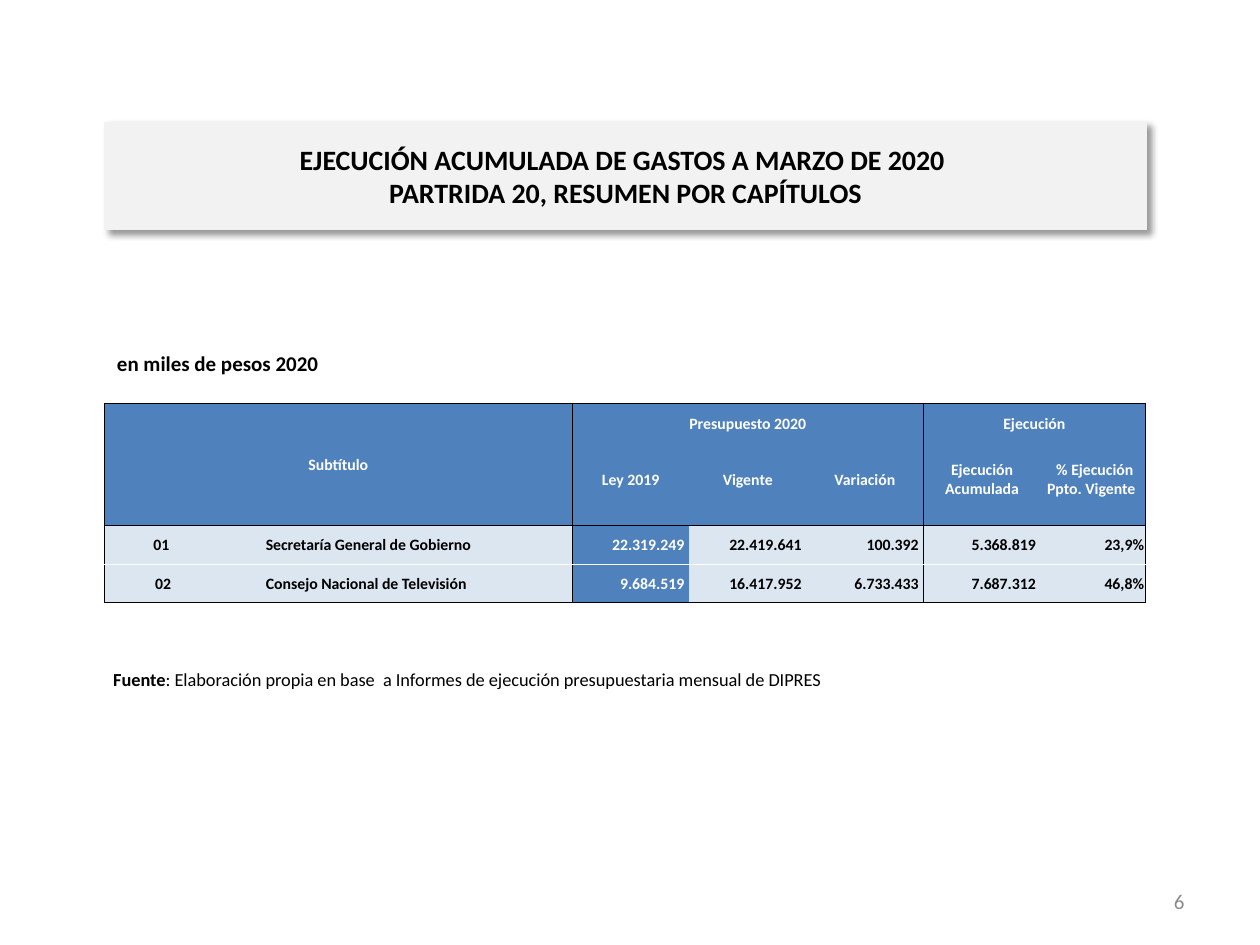
from lxml import etree
from pptx import Presentation
from pptx.dml.color import RGBColor
from pptx.enum.shapes import MSO_SHAPE
from pptx.enum.text import MSO_ANCHOR, PP_ALIGN
from pptx.oxml.ns import qn
from pptx.util import Inches, Pt

RECT = MSO_SHAPE.RECTANGLE
TOP, MID, BOT = MSO_ANCHOR.TOP, MSO_ANCHOR.MIDDLE, MSO_ANCHOR.BOTTOM
LEFT, CENTER, RIGHT = PP_ALIGN.LEFT, PP_ALIGN.CENTER, PP_ALIGN.RIGHT
JUST = PP_ALIGN.JUSTIFY

BLACK, WHITE, GRAY = "000000", "FFFFFF", "8C8C8C"
BLUE, PALE, PANEL = "4F81BD", "DCE6F1", "F2F2F2"

TITLE = ("EJECUCIÓN ACUMULADA DE GASTOS A MARZO DE 2020 \v"
         "PARTRIDA 20, RESUMEN POR CAPÍTULOS")
NOTES = [
    ((7.17, 6.95, 2.33, 0.4), [("6", False)], 12, GRAY, RIGHT, MID),
    ((0.8, 5.25, 8.25, 0.4),
     [("Fuente", True),
      (": Elaboración propia en base  a Informes de ejecución "
       "presupuestaria mensual de DIPRES", False)], 10.5, BLACK, LEFT, TOP),
    ((0.83, 2.73, 8.11, 0.31), [("en miles de pesos 2020", True)],
     12, BLACK, LEFT, TOP),
]
ROWS = [
    ["Subtítulo", "", "", "Presupuesto 2020", "", "", "Ejecución", ""],
    ["", "", "", "Ley 2019", "Vigente", "Variación",
     "Ejecución Acumulada", " % Ejecución Ppto. Vigente "],
    ["01 ", "", "Secretaría General de Gobierno", "22.319.249 ",
     "22.419.641 ", "100.392 ", "5.368.819 ", "23,9%"],
    ["02", "", "Consejo Nacional de Televisión", "9.684.519 ",
     "16.417.952 ", "6.733.433 ", "7.687.312 ", "46,8%"],
]
WIDE = [0.93, 0.34, 2.44, 0.93, 0.93, 0.93, 0.93, 0.83]
HIGH = [0.24, 0.73, 0.31, 0.3]
SPANS = [(0, 0, 1, 2), (0, 3, 0, 5), (0, 6, 0, 7)]
ALIGN = [CENTER, CENTER, JUST] + [RIGHT] * 5
COL_EDGE = {0: BLACK, 3: BLACK, 6: BLACK, 8: BLACK}
ROW_EDGE = {0: BLACK, 2: BLACK, 3: WHITE, 4: BLACK}
PAD = {"margin_left": 0.01, "margin_right": 0.01,
       "margin_top": 0.01, "margin_bottom": 0}


def rgb(code):
    return RGBColor.from_string(code)


def box(at):
    return [Inches(n) for n in at]


def write(frame, runs, size, color, align):
    para = frame.paragraphs[0]
    para.alignment = align
    for text, bold in runs:
        para.add_run()
        run = para.runs[-1]
        if "\v" in text:
            para.text = text
        else:
            run.text = text
        for part in para.runs:
            if part.font.size is None:
                form = {"size": Pt(size), "name": "Calibri", "bold": bold}
                for key, val in form.items():
                    setattr(part.font, key, val)
                part.font.color.rgb = rgb(color)


def node(base, tag, **attrs):
    return etree.SubElement(base, qn("a:" + tag), attrs)


def edge(cell, side, color):
    line = node(cell._tc.get_or_add_tcPr(), "ln" + side, w=str(Pt(0.5)))
    if color:
        node(node(line, "solidFill"), "srgbClr", val=color)
    else:
        node(line, "noFill")


def add_title(slide):
    panel = slide.shapes.add_shape(RECT, *box((0.83, 0.97, 8.27, 0.85)))
    panel.fill.solid()
    panel.fill.fore_color.rgb = rgb(PANEL)
    panel.line.color.rgb = rgb(PANEL)
    panel.line.width = Pt(0.75)
    panel.shadow.inherit = False
    glow = node(panel._element.spPr.find(qn("a:effectLst")), "outerShdw",
                blurRad=str(Pt(4)), dist=str(Pt(3)), dir="2700000",
                algn="tl", rotWithShape="0")
    node(node(glow, "srgbClr", val=BLACK), "alpha", val="40000")
    frame = panel.text_frame
    frame.word_wrap = True
    frame.vertical_anchor = MID
    write(frame, [(TITLE, True)], 16, BLACK, CENTER)


def add_note(slide, at, runs, size, color, align, anchor):
    frame = slide.shapes.add_textbox(*box(at)).text_frame
    frame.word_wrap = True
    frame.vertical_anchor = anchor
    write(frame, runs, size, color, align)


def add_grid(slide):
    at = (0.83, 3.2, sum(WIDE), sum(HIGH))
    grid = slide.shapes.add_table(len(ROWS), len(WIDE), *box(at)).table
    for col, width in zip(grid.columns, WIDE):
        col.width = Inches(width)
    for row, height in zip(grid.rows, HIGH):
        row.height = Inches(height)
    for top, left, low, right in SPANS:
        grid.cell(top, left).merge(grid.cell(low, right))
    for r, row in enumerate(ROWS):
        for c, text in enumerate(row):
            cell = grid.cell(r, c)
            head = r < 2
            for key, val in PAD.items():
                setattr(cell, key, Inches(val))
            cell.vertical_anchor = BOT if r == 0 and c > 2 else MID
            tall = cell.span_height if cell.is_merge_origin else 1
            wide = cell.span_width if cell.is_merge_origin else 1
            edge(cell, "L", COL_EDGE.get(c))
            edge(cell, "R", COL_EDGE.get(c + wide))
            edge(cell, "T", ROW_EDGE.get(r))
            edge(cell, "B", ROW_EDGE.get(r + tall))
            dark = head or c == 3
            cell.fill.solid()
            cell.fill.fore_color.rgb = rgb(BLUE if dark else PALE)
            if text:
                write(cell.text_frame, [(text, True)], 9,
                      WHITE if dark else BLACK, CENTER if head else ALIGN[c])
            else:
                cell.text_frame.paragraphs[0].font.size = Pt(9)


def main():
    deck = Presentation()
    deck.slide_width, deck.slide_height = Inches(10), Inches(7.5)
    slide = deck.slides.add_slide(deck.slide_layouts[6])
    add_title(slide)
    for note in NOTES:
        add_note(slide, *note)
    add_grid(slide)
    deck.save("out.pptx")


if __name__ == "__main__":
    main()
